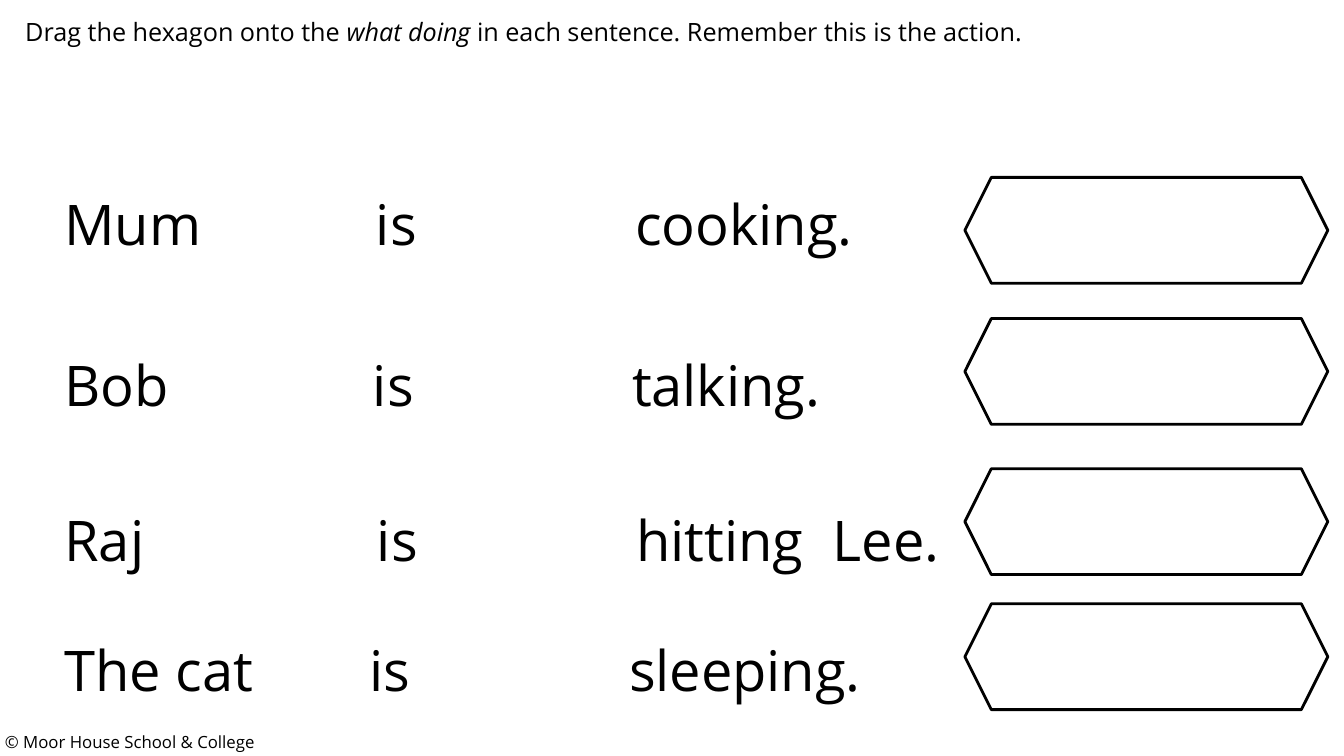
"""Builds a worksheet slide: drag a hexagon onto the action in each sentence."""
from lxml import etree
from pptx import Presentation
from pptx.dml.color import RGBColor
from pptx.enum.shapes import MSO_SHAPE
from pptx.enum.text import MSO_ANCHOR, MSO_AUTO_SIZE, PP_ALIGN
from pptx.oxml.ns import qn
from pptx.util import Inches, Pt

BLACK = RGBColor(0x00, 0x00, 0x00)
FONT = "Open Sans"
HEXAGON = MSO_SHAPE.HEXAGON
TOP = MSO_ANCHOR.TOP
GROW = MSO_AUTO_SIZE.SHAPE_TO_FIT_TEXT
LEFT = PP_ALIGN.LEFT

VERB_GAP = 2.57
OBJECT_GAP = 1.95

SENTENCES = [
    (["Mum", "is", "cooking."], 3.09, 1.83, 8.45, 1.76),
    (["Bob", "is", "talking."], 3.06, 3.43, 8.45, 3.16),
    (["Raj", "is", "hitting", "Lee."], 3.10, 4.97, 9.67, 4.65),
    (["The cat", "is", "sleeping."], 3.03, 6.26, 9.25, 5.99),
]


def style_text(frame, size):
    frame.word_wrap = True
    frame.auto_size = GROW
    frame.vertical_anchor = TOP
    paragraph = frame.paragraphs[0]
    paragraph.alignment = LEFT
    for run in paragraph.runs:
        run.font.name = FONT
        run.font.size = Pt(size)
        run.font.color.rgb = BLACK


def add_tab_stops(paragraph, stops):
    tab_list = etree.SubElement(paragraph._p.get_or_add_pPr(), qn("a:tabLst"))
    for stop in stops:
        etree.SubElement(tab_list, qn("a:tab"), pos=str(Inches(stop)), algn="l")


prs = Presentation()
prs.slide_width = Inches(13.33)
prs.slide_height = Inches(7.5)
slide = prs.slides.add_slide(prs.slide_layouts[5])

copyright_line = slide.shapes.add_textbox(
    Inches(-0.05), Inches(7.21), Inches(5.12), Inches(0.3))
copyright_line.text_frame.text = "© Moor House School & College"
style_text(copyright_line.text_frame, 12)

instruction = slide.shapes.title
instruction.left, instruction.top = Inches(0.15), Inches(0.11)
instruction.width, instruction.height = Inches(12.53), Inches(0.4)
instruction_paragraph = instruction.text_frame.paragraphs[0]
for words, italic in [
    ("Drag the hexagon onto the ", False),
    ("what doing ", True),
    ("in each sentence. Remember this is the action.", False),
]:
    phrase = instruction_paragraph.add_run()
    phrase.text = words
    phrase.font.italic = italic
style_text(instruction.text_frame, 18)

for words, is_stop, sentence_top, width, hexagon_top in SENTENCES:
    sentence = slide.shapes.add_textbox(
        Inches(0.54), Inches(sentence_top), Inches(width), Inches(0.77))
    sentence.text_frame.text = "\t".join(words)
    verb_stop = is_stop + VERB_GAP
    stops = [is_stop, verb_stop, verb_stop + OBJECT_GAP][:len(words) - 1]
    add_tab_stops(sentence.text_frame.paragraphs[0], stops)
    style_text(sentence.text_frame, 40)

    action_hexagon = slide.shapes.add_shape(
        HEXAGON, Inches(9.57), Inches(hexagon_top), Inches(3.6), Inches(1.05))
    action_hexagon.shadow.inherit = False
    action_hexagon.fill.background()
    action_hexagon.line.color.rgb = BLACK
    action_hexagon.line.width = Pt(2)

prs.save("out.pptx")
